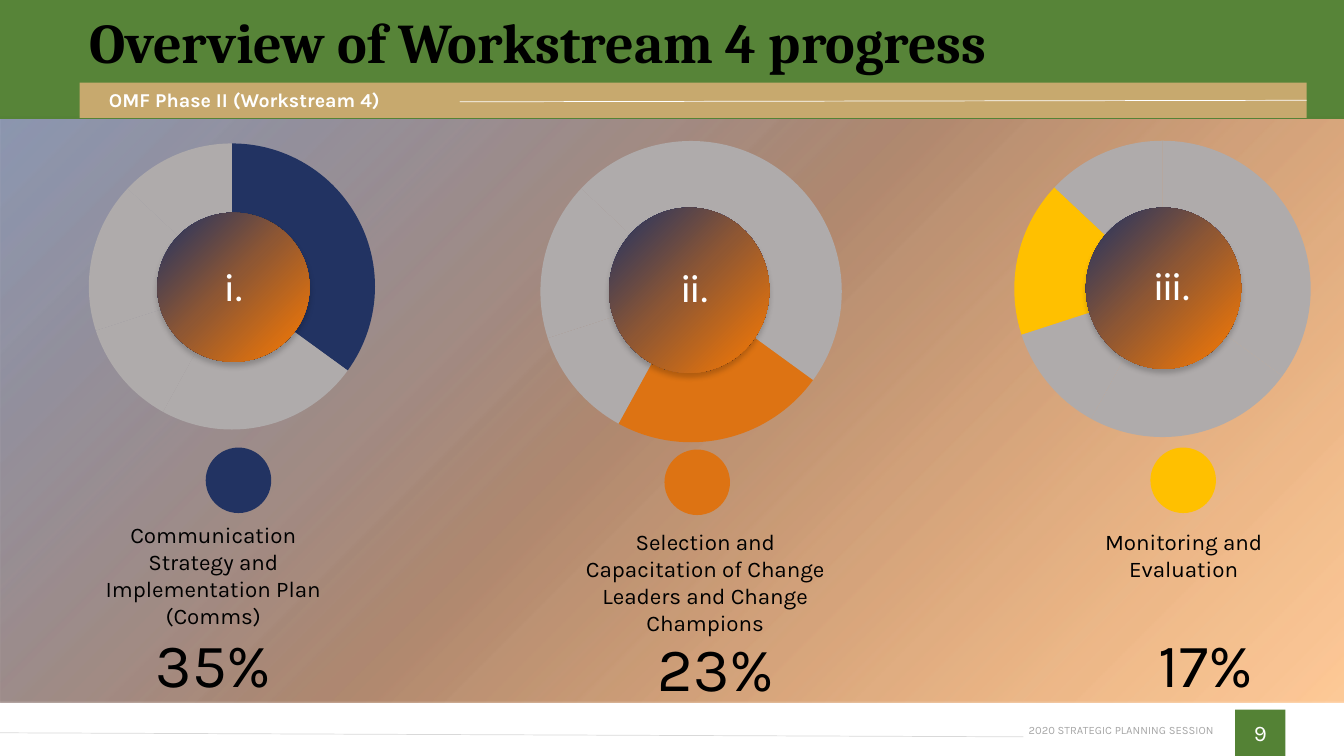
from lxml import etree
from pptx import Presentation, util as u
from pptx.chart.data import CategoryChartData
from pptx.dml.color import RGBColor
from pptx.enum import chart, shapes, text
from pptx.oxml import parse_xml
from pptx.oxml.ns import qn

PX = 9144  # EMU in one px, 100 px to the inch
COLORS = {
    "black": "000000", "white": "FFFFFF", "green": "548235", "tan": "C7A96E",
    "navy": "223362", "orange": "DD7313", "yellow": "FFC000", "grey": "AFABAB",
    "caption": "A6A6A6", "rule": "D9D9D9",
}
GRADIENT = [(0, "FC7B01"), (52, "8F5733"), (100, "1D3164")]
XMLNS = 'xmlns:a="http://schemas.openxmlformats.org/drawingml/2006/main"'
ALIGN = {"l": text.PP_ALIGN.LEFT, "c": text.PP_ALIGN.CENTER, "r": text.PP_ALIGN.RIGHT}
ANCHOR = {"top": text.MSO_ANCHOR.TOP, "middle": text.MSO_ANCHOR.MIDDLE}
RECT, OVAL = shapes.MSO_SHAPE.RECTANGLE, shapes.MSO_SHAPE.OVAL
SHARES = [35, 23, 12, 17, 13]


def rgb(name):
    return RGBColor.from_string(COLORS[name])


def emu(lengths):
    return [u.Emu(length * PX) for length in lengths]


class SlideBuilder:
    def __init__(self, deck):
        self.slide = deck.slides.add_slide(deck.slide_layouts[6])

    def shape(self, kind, at, color=None, alpha=None):
        shape = self.slide.shapes.add_shape(kind, *emu(at))
        shape.shadow.inherit = False
        shape.line.fill.background()
        if color:
            shape.fill.solid()
            shape.fill.fore_color.rgb = rgb(color)
        if alpha:
            tint = shape._element.spPr.find(qn("a:solidFill"))[0]
            etree.SubElement(tint, qn("a:alpha"), val=str(alpha * 1000))
        return shape

    def gradient(self, kind, at, alphas=(100, 100, 100)):
        shape = self.shape(kind, at)
        stops = "".join(
            f'<a:gs pos="{pos * 1000}"><a:srgbClr val="{color}">'
            f'<a:alpha val="{alpha * 1000}"/></a:srgbClr></a:gs>'
            for (pos, color), alpha in zip(GRADIENT, alphas))
        fill = parse_xml(
            f'<a:gradFill {XMLNS} rotWithShape="1"><a:gsLst>{stops}</a:gsLst>'
            '<a:path path="circle"><a:fillToRect l="100000" t="100000"/></a:path>'
            '<a:tileRect r="-100000" b="-100000"/></a:gradFill>')
        shape._element.spPr.find(qn("a:prstGeom")).addnext(fill)
        return shape

    def hub(self, at):
        disc = self.gradient(OVAL, at)
        disc._element.spPr.find(qn("a:effectLst")).append(parse_xml(
            f'<a:outerShdw {XMLNS} blurRad="50800" dist="38100" dir="5400000" '
            'rotWithShape="0"><a:srgbClr val="000000"><a:alpha val="20000"/>'
            '</a:srgbClr></a:outerShdw>'))

    def fill_text(self, box, words, size, color="black", font="Karla", bold=False,
                  align="c", anchor="top", inset=True, grow=True, **spacing):
        frame = box.text_frame
        layout = {"word_wrap": True, "vertical_anchor": ANCHOR[anchor]}
        if grow:
            layout["auto_size"] = text.MSO_AUTO_SIZE.SHAPE_TO_FIT_TEXT
        if not inset:
            layout.update({f"margin_{side}": 0
                           for side in ("left", "top", "right", "bottom")})
        para = frame.paragraphs[0]
        span = para.add_run()
        span.text = words
        span.font.color.rgb = rgb(color)
        formats = (
            (frame, layout),
            (para, {"alignment": ALIGN[align], **spacing}),
            (span.font, {"size": u.Pt(size), "name": font, "bold": bold}),
        )
        for target, values in formats:
            for name, value in values.items():
                setattr(target, name, value)

    def label(self, at, words, size, **style):
        self.fill_text(self.slide.shapes.add_textbox(*emu(at)), words, size, **style)

    def line(self, ends, color):
        line = self.slide.shapes.add_connector(
            shapes.MSO_CONNECTOR.STRAIGHT, *emu(ends))
        line.line.color.rgb = rgb(color)
        line.line.width = u.Pt(0.5)
        etree.SubElement(line._element.spPr, qn("a:effectLst"))
        return line

    def doughnut(self, at, plot, highlight, color):
        data = CategoryChartData()
        data.categories = [str(n + 1) for n in range(len(SHARES))]
        data.add_series("Series 1", SHARES)
        ring = self.slide.shapes.add_chart(
            chart.XL_CHART_TYPE.DOUGHNUT, *emu(at), data).chart
        ring.has_legend = ring.has_title = False
        for name, value in {"size": u.Pt(10), "name": "Calibri"}.items():
            setattr(ring.font, name, value)
        ring.font.color.rgb = rgb("black")
        series = ring.plots[0]
        series.vary_by_categories = True
        for index in range(len(SHARES)):
            wedge = series.series[0].points[index].format
            wedge.fill.solid()
            wedge.fill.fore_color.rgb = rgb(color if index == highlight else "grey")
            wedge.line.fill.background()

        # Hole size and plot placement
        area = ring._chartSpace.find(".//" + qn("c:plotArea"))
        hole = area.find(".//" + qn("c:holeSize"))
        if hole is None:
            hole = etree.SubElement(area.find(qn("c:doughnutChart")), qn("c:holeSize"))
        hole.set("val", "54")
        layout = area.find(qn("c:layout"))
        if layout is None:
            layout = etree.Element(qn("c:layout"))
            area.insert(0, layout)
        manual = etree.SubElement(layout, qn("c:manualLayout"))
        settings = [("layoutTarget", "inner"), ("xMode", "edge"), ("yMode", "edge"),
                    *zip("xywh", plot)]
        for tag, value in settings:
            etree.SubElement(manual, qn("c:" + tag), val=str(value))


# Per workstream: colour, highlighted wedge, then the placed parts
WORKSTREAMS = [
    {"color": "navy", "wedge": 0, "dot": (204, 444),
     "ring": (70, 122), "plot": (0.06, 0.03, 0.94, 0.9),
     "hub": (156, 211, 151, 148), "numeral": ("i.", (200, 255, 65, 57)),
     "name": ("Communication Strategy and Implementation Plan (Comms)",
              (94, 517, 235, 108)), "share": (128, 616)},
    {"color": "orange", "wedge": 1, "dot": (659, 446),
     "ring": (536, 117), "plot": (0, 0.06, 0.99, 0.9),
     "hub": (604, 206, 159, 164), "numeral": ("ii.", (637, 256, 105, 95)),
     "name": ("Selection and Capacitation of Change Leaders and Change Champions",
              (573, 524, 253, 108)), "share": (626, 620)},
    {"color": "yellow", "wedge": 3, "dot": (1141, 444),
     "ring": (1002, 116), "plot": (0.01, 0.07, 0.98, 0.87),
     "hub": (1077, 206, 154, 160), "numeral": ("iii.", (1112, 254, 102, 93)),
     "name": ("Monitoring and Evaluation", (1096, 524, 156, 54)),
     "share": (1112, 616)},
]


def main():
    deck = Presentation()
    deck.slide_width, deck.slide_height = emu((1333, 750))
    page = SlideBuilder(deck)

    # Footer
    number = page.shape(RECT, (1225, 704, 50, 46), "green")
    page.fill_text(number, "9", 16, color="white", anchor="middle", grow=False)
    page.label((1015, 718, 189, 13), "2020 STRATEGIC PLANNING SESSION", 8,
               color="caption", align="r", anchor="middle", inset=False)
    page.line((1015, 731, 0, 727), "rule")

    # Backdrop and header
    page.gradient(RECT, (0, 116, 1333, 581), alphas=(40, 70, 50))
    page.shape(RECT, (0, 0, 1333, 118), "green", alpha=98)
    ribbon = page.shape(RECT, (79, 82, 1217, 35), "tan")
    page.label((108, 87, 348, 24), "OMF Phase II (Workstream 4)", 14, color="white",
               bold=True, align="l", anchor="middle", inset=False,
               space_after=u.Pt(3))
    page.line((456, 101, 1296, 100), "white").end_connect(ribbon, 3)
    page.label((79, 0, 1255, 90), "Overview of Workstream 4 progress", 40,
               font="Cambria", bold=True, align="l", anchor="middle", grow=False,
               line_spacing=0.9)

    # Workstreams
    for item in WORKSTREAMS:
        name, name_at = item["name"]
        numeral, numeral_at = item["numeral"]
        page.shape(OVAL, (*item["dot"], 65, 65), item["color"])
        page.label(name_at, name, 16, inset=False)
        page.doughnut((*item["ring"], 302, 338), item["plot"],
                      item["wedge"], item["color"])
        page.hub(item["hub"])
        page.label(numeral_at, numeral, 28, color="white", font="Calibri")
        page.label((*item["share"], 168, 84), f"{SHARES[item['wedge']]}%", 44)

    deck.save("out.pptx")


if __name__ == "__main__":
    main()
